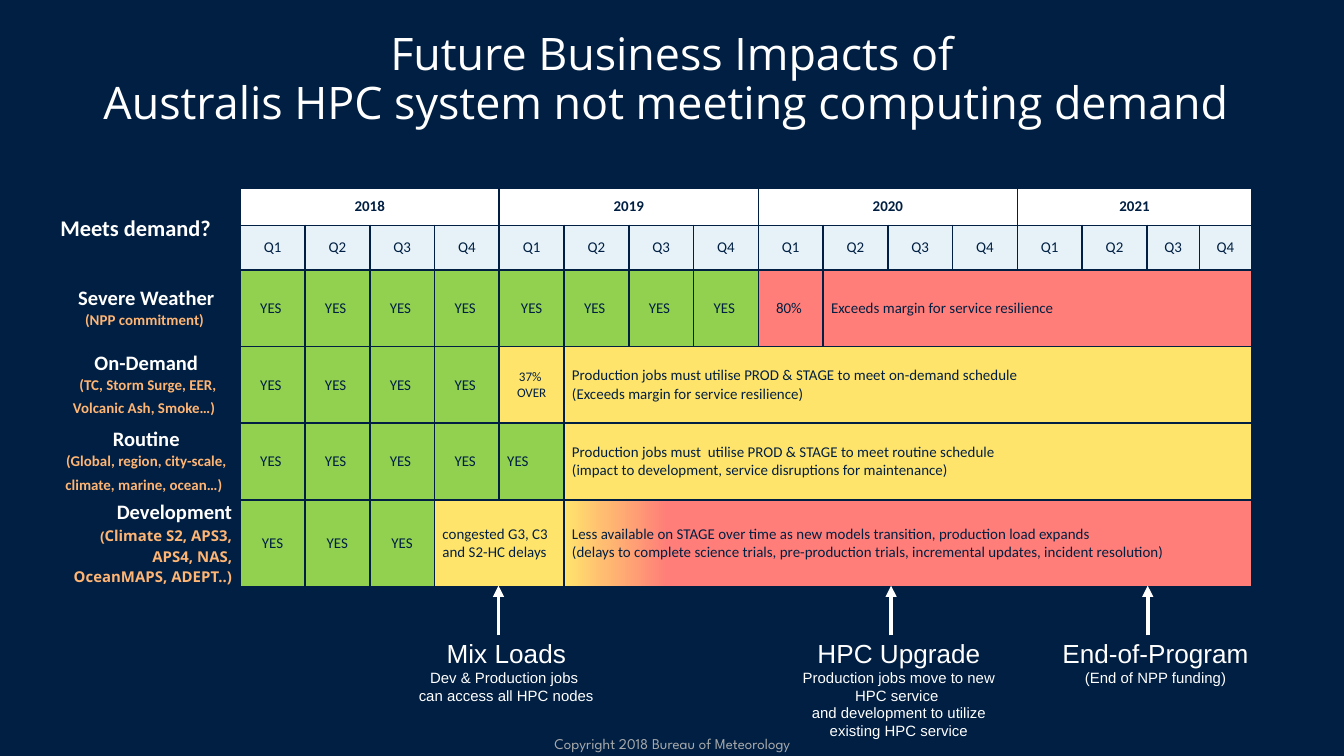
"""Build the slide on future business impacts of the HPC system."""
from lxml import etree
from pptx import Presentation
from pptx.dml.color import RGBColor
from pptx.enum.shapes import MSO_CONNECTOR
from pptx.enum.text import MSO_ANCHOR, PP_ALIGN
from pptx.oxml.ns import qn
from pptx.util import Cm, Pt

LEFT, MID, RIGHT = PP_ALIGN.LEFT, PP_ALIGN.CENTER, PP_ALIGN.RIGHT
TOP, CENTRE = MSO_ANCHOR.TOP, MSO_ANCHOR.MIDDLE
LINE = MSO_CONNECTOR.STRAIGHT

HUES = {
    "navy": "001F42", "white": "FFFFFF", "pale": "E7F2F8", "green": "92D050",
    "red": "FF7E79", "gold": "FFE46C", "peach": "FFB574", "grey": "A7A9AB",
}
SANS, BODY, HEAD, FOOT = "Arial", "Calibri", "Open Sans", "League Spartan"

TITLE = "Future Business Impacts of\vAustralis HPC system not meeting computing demand "
FOOTER = "Copyright 2018 Bureau of Meteorology"
YEARS = ["2018", "2019", "2020", "2021"]

YES = ("YES ", 1, "green", MID, 8)
LATE = (" YES ", 1, "green", MID, 8)
ROWS = [
    {
        "name": "Severe Weather", "align": MID,
        "note": [("(NPP commitment) ", 8, BODY)],
        "cells": [YES] * 4 + [LATE] + [YES] * 3 + [
            ("80% ", 1, "red", MID, 8),
            ("Exceeds margin for service resilience", 7, "red", LEFT, 8),
        ],
    },
    {
        "name": "On-Demand", "align": MID,
        "note": [(" (TC, Storm Surge, EER, Volcanic Ash, Smoke…)", 8, BODY), (" ", 10.5, BODY)],
        "cells": [YES] * 4 + [
            ("37% \nOVER", 1, "gold", MID, 7),
            ("Production jobs must utilise PROD & STAGE to meet on-demand schedule\n"
             "(Exceeds margin for service resilience)", 11, "gold", LEFT, 8),
        ],
    },
    {
        "name": "Routine", "align": MID,
        "note": [("(Global, region, city-scale, climate, marine, ocean…)", 8, BODY), (" ", 11, BODY)],
        "cells": [YES] * 4 + [
            ("YES", 1, "green", LEFT, 8),
            ("Production jobs must  utilise PROD & STAGE to meet routine schedule\n"
             "(impact to development, service disruptions for maintenance)", 11, "gold", LEFT, 8),
        ],
    },
    {
        "name": "Development", "align": RIGHT,
        "note": [("(", 7, SANS), ("Climate S2, APS3, APS4, NAS, OceanMAPS, ADEPT..)", 8, HEAD)],
        "cells": [LATE] * 3 + [
            ("congested G3, C3 and S2-HC delays", 2, "gold", LEFT, 8),
            ("Less available on STAGE over time as new models transition, production load expands\n"
             "(delays to complete science trials, pre-production trials, incremental updates, "
             "incident resolution)", 11, "fade", LEFT, 8),
        ],
    },
]
EVENTS = [
    (9.42, "Mix Loads", ["Dev & Production jobs ", "can access all HPC nodes"]),
    (16.84, "HPC Upgrade", ["Production jobs move to new HPC service ",
                            "and development to utilize existing HPC service"]),
    (21.69, "End-of-Program", ["(End of NPP funding)"]),
]
WIDTHS = [3.55] + [17.14 / 14] * 14 + [0.99] * 2
HEIGHTS = [0.7, 0.84, 1.45, 1.45, 1.45, 1.65]


def hue(name):
    return RGBColor.from_string(HUES[name])


def style(font, size, tint, face, bold=False):
    font.size, font.name, font.bold = Pt(size), face, bold
    font.color.rgb = hue(tint)


def say(frame, text, size, tint, face=BODY, bold=False, align=MID):
    para = frame.add_paragraph() if frame.text else frame.paragraphs[0]
    para.text = text
    para.alignment = align
    style(para.font, size, tint, face, bold)
    return para


def box(slide, left, top, width, height, anchor=TOP, wrap=True):
    frame = slide.shapes.add_textbox(Cm(left), Cm(top), Cm(width), Cm(height)).text_frame
    frame.margin_left = frame.margin_right = frame.margin_top = frame.margin_bottom = 0
    frame.vertical_anchor, frame.word_wrap = anchor, wrap
    return frame


def rule(cell):
    props = cell._tc.get_or_add_tcPr()
    for side in ("lnL", "lnR", "lnT", "lnB"):
        edge = etree.SubElement(props, qn("a:" + side), w=str(Pt(1)))
        fill = etree.SubElement(edge, qn("a:solidFill"))
        etree.SubElement(fill, qn("a:srgbClr"), val=HUES["navy"])


def paint(fill, tint):
    if tint == "fade":
        fill.gradient()
        fill.gradient_angle = 0
        for stop, spot, name in zip(fill.gradient_stops, (0, 0.15), ("gold", "red")):
            stop.position, stop.color.rgb = spot, hue(name)
    else:
        fill.solid()
        fill.fore_color.rgb = hue(tint)


def put(grid, row, col, text, span, tint, align=MID, size=8, bold=False):
    cell = grid.cell(row, col)
    if span > 1:
        cell.merge(grid.cell(row, col + span - 1))
    paint(cell.fill, tint)
    for line in text.split("\n"):
        say(cell.text_frame, line, size, "navy", bold=bold, align=align)


def chart_demand(slide):
    frame = slide.shapes.add_table(len(HEIGHTS), len(WIDTHS), Cm(0.99), Cm(3.56),
                                   Cm(sum(WIDTHS)), Cm(sum(HEIGHTS)))
    grid = frame.table
    grid.first_row = grid.horz_banding = False
    for col, width in zip(grid.columns, WIDTHS):
        col.width = Cm(width)
    for row, height in zip(grid.rows, HEIGHTS):
        row.height = Cm(height)
    for cell in grid.iter_cells():
        cell.margin_left = cell.margin_right = Cm(0.15)
        cell.margin_top = cell.margin_bottom = 0
        cell.vertical_anchor = CENTRE
        rule(cell)
        cell.fill.background()

    corner = grid.cell(0, 0)
    corner.merge(grid.cell(1, 0))
    say(corner.text_frame, "Meets demand?", 12, "white", bold=True, align=LEFT)
    for pos, year in enumerate(YEARS):
        put(grid, 0, 1 + 4 * pos, year, 4, "white", bold=True)
    for pos in range(16):
        put(grid, 1, 1 + pos, f"Q{pos % 4 + 1}", 1, "pale")

    for row, item in enumerate(ROWS, 2):
        label = grid.cell(row, 0).text_frame
        say(label, item["name"], 11, "white", bold=True, align=item["align"])
        para = label.add_paragraph()
        para.alignment = item["align"]
        for text, size, face in item["note"]:
            run = para.add_run()
            run.text = text
            style(run.font, size, "peach", face, True)
        col = 1
        for text, span, tint, align, size in item["cells"]:
            put(grid, row, col, text, span, tint, align, size)
            col += span


def mark(slide, spot, name, notes):
    arrow = slide.shapes.add_connector(LINE, Cm(spot), Cm(12.01), Cm(spot), Cm(11.07))
    arrow.line.color.rgb = hue("white")
    arrow.line.width = Pt(2)
    etree.SubElement(arrow.line._get_or_add_ln(), qn("a:tailEnd"), type="triangle")
    etree.SubElement(arrow._element.spPr, qn("a:effectLst"))
    frame = box(slide, spot - 1.69, 12.04, 3.68, 1.35, wrap=False)
    say(frame, name, 14, "white", SANS)
    for note in notes:
        say(frame, note, 8, "white", SANS)


def main():
    deck = Presentation()
    deck.slide_width, deck.slide_height = Cm(25.4), Cm(14.29)
    slide = deck.slides.add_slide(deck.slide_layouts[6])
    paint(slide.background.fill, "navy")
    title = say(box(slide, 0.99, 0.61, 23.42, 1.75), TITLE, 24, "white", HEAD)
    title.line_spacing = 0.9
    say(box(slide, 8.69, 13.82, 8.05, 0.48, CENTRE), FOOTER, 8, "grey", FOOT)
    chart_demand(slide)
    for event in EVENTS:
        mark(slide, *event)
    deck.save("out.pptx")


if __name__ == "__main__":
    main()
